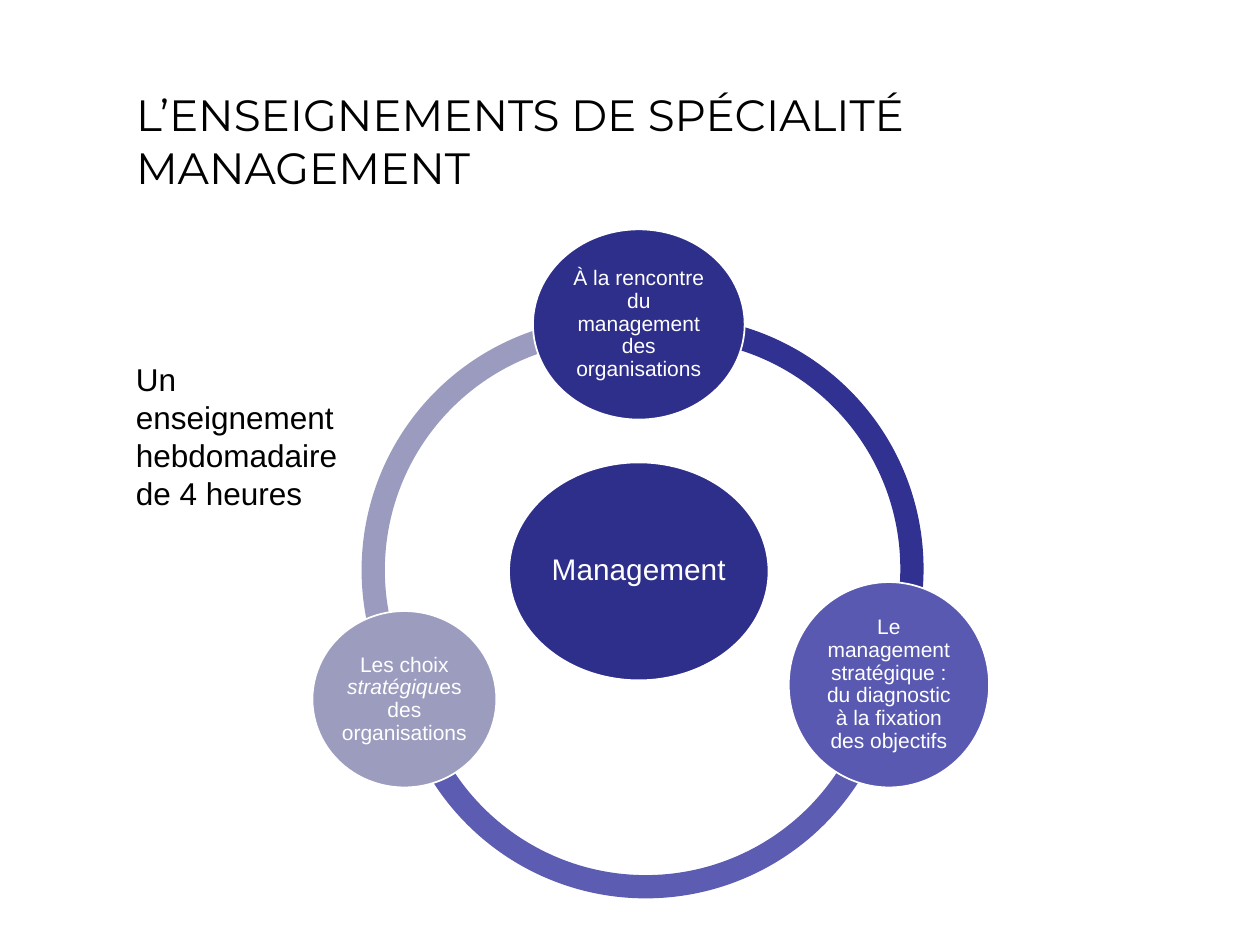
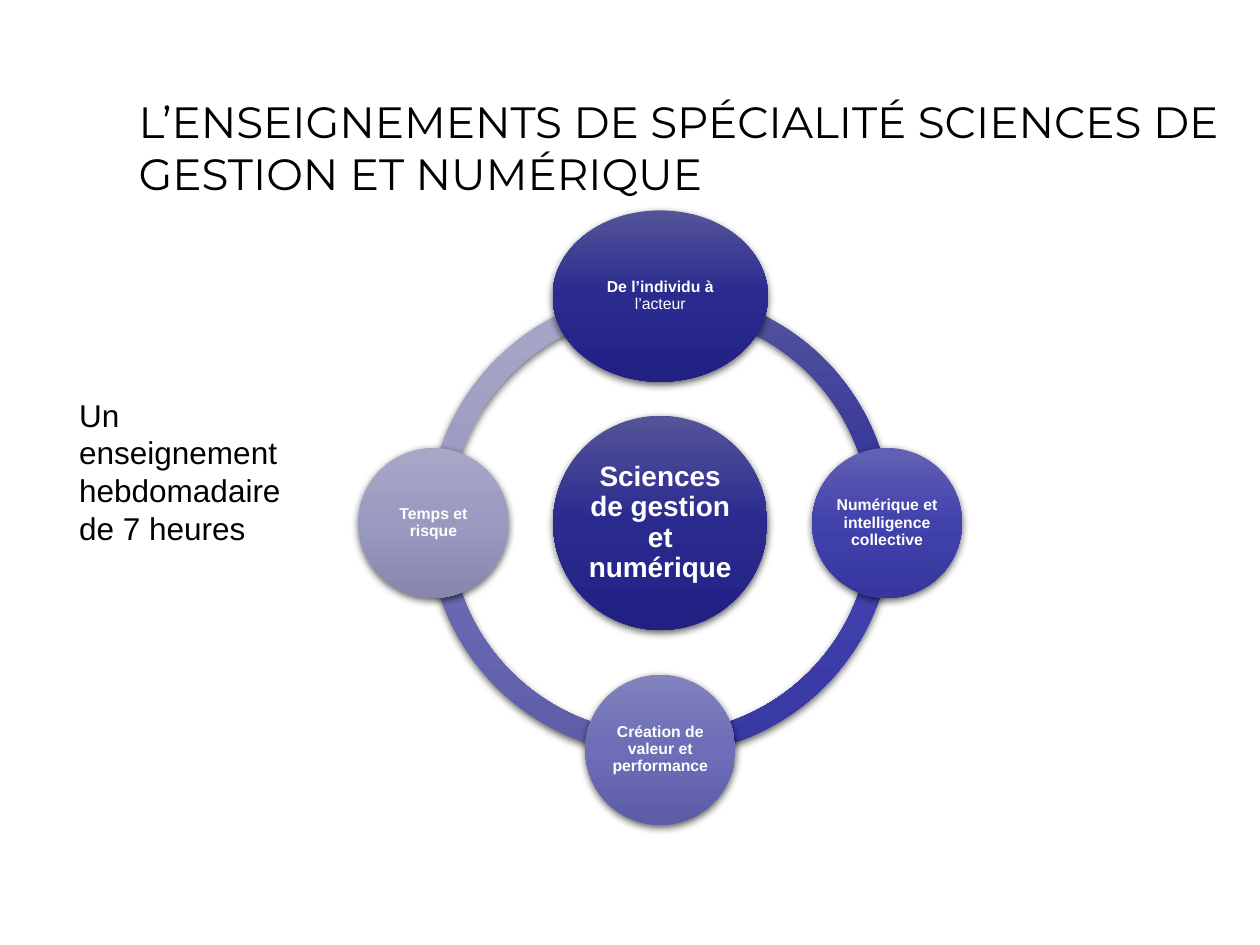
from math import cos, radians, sin

from lxml.etree import SubElement
from pptx import Presentation
from pptx.dml.color import RGBColor
from pptx.enum.shapes import MSO_SHAPE
from pptx.enum.text import MSO_ANCHOR, MSO_AUTO_SIZE, PP_ALIGN
from pptx.oxml.ns import qn
from pptx.util import Inches, Pt

BLACK, WHITE = "000000", "FFFFFF"
NAVY = ("545499", "2A2A8F", "212184")


def rgb(value):
    return RGBColor.from_string(value)


class Deck:
    title_font, body_font = "Montserrat", "Arial"

    def __init__(self):
        self.prs = Presentation()
        self.prs.slide_width, self.prs.slide_height = Inches(10), Inches(7.5)

    def add_slide(self, title, left, top):
        self.s = self.prs.slides.add_slide(self.prs.slide_layouts[5])
        sp = self.s.shapes.title
        sp.left, sp.top, sp.width, sp.height = map(Inches, (left, top, 9, 1.25))
        tf = sp.text_frame
        tf.auto_size = MSO_AUTO_SIZE.NONE
        tf.vertical_anchor = MSO_ANCHOR.MIDDLE
        p = tf.paragraphs[0]
        p.alignment = PP_ALIGN.LEFT
        self.run(p, title, 25, BLACK, self.title_font)

    def run(self, p, text, size, color, font=None, bold=False, italic=False):
        r = p.add_run()
        r.text = text
        r.font.name = font or self.body_font
        r.font.size = Pt(size)
        r.font.bold, r.font.italic = bold, italic
        r.font.color.rgb = rgb(color)

    def start_cycle(self):
        self.group = self.s.shapes.add_group_shape()

    def shape(self, kind, box, fill):
        sp = self.group.shapes.add_shape(kind, *map(Inches, box))
        sp.shadow.inherit = False
        sp.line.fill.background()
        if isinstance(fill, str):
            sp.fill.solid()
            sp.fill.fore_color.rgb = rgb(fill)
        else:
            self.gradient(sp, fill)
            self.drop_shadow(sp)
        return sp

    def gradient(self, sp, colors):
        sp.fill.gradient()
        sp.fill.gradient_angle = 270
        stops = sp._element.spPr.find(qn("a:gradFill")).find(qn("a:gsLst"))
        for stop in list(stops):
            stops.remove(stop)
        for i, color in enumerate(colors):
            stop = SubElement(stops, qn("a:gs"), pos=str(i * 50000))
            SubElement(stop, qn("a:srgbClr"), val=color)

    def drop_shadow(self, sp):
        effects = sp._element.spPr.find(qn("a:effectLst"))
        shadow = SubElement(effects, qn("a:outerShdw"), blurRad=str(Pt(4.5)),
                            dist=str(Pt(1.5)), dir="5400000", rotWithShape="0")
        color = SubElement(shadow, qn("a:srgbClr"), val=BLACK)
        SubElement(color, qn("a:alpha"), val="63000")

    def arc(self, left, top, size, start, end, fill):
        sp = self.shape(MSO_SHAPE.BLOCK_ARC, (left, top, size, size), fill)
        for i, value in enumerate((start * 0.6, end * 0.6, 0.046)):
            sp.adjustments[i] = value

    def bubble(self, box, fill, size, runs, outline=False, inset=0.02):
        sp = self.shape(MSO_SHAPE.OVAL, box, fill)
        if outline:
            sp.line.color.rgb = rgb(WHITE)
            sp.line.width = Pt(1)
        tf = sp.text_frame
        tf.word_wrap = True
        tf.vertical_anchor = MSO_ANCHOR.MIDDLE
        tf.margin_left = tf.margin_right = Inches(inset)
        tf.margin_top = tf.margin_bottom = Inches(inset)
        p = tf.paragraphs[0]
        p.alignment = PP_ALIGN.CENTER
        p.line_spacing = 0.9
        for text, style in runs:
            self.run(p, text, size, WHITE, **style)

    def note(self, text, left, top):
        sp = self.s.shapes.add_textbox(*map(Inches, (left, top, 1.98, 1.31)))
        tf = sp.text_frame
        tf.word_wrap = True
        tf.auto_size = MSO_AUTO_SIZE.SHAPE_TO_FIT_TEXT
        self.run(tf.paragraphs[0], text, 18, BLACK)


def management_slide(deck):
    deck.add_slide("L’ENSEIGNEMENTS DE SPÉCIALITÉ MANAGEMENT", 0.98, 0.49)
    deck.start_cycle()
    arcs = [
        (2.87, 2.52, 148.36, 275.76, "9B9BBF"),
        (3.12, 3.12, 9.09, 167.43, "5C5CB3"),
        (3.32, 2.51, 262.65, 27.9, "313192"),
    ]
    for left, top, start, end, color in arcs:
        deck.arc(left, top, 4.01, start, end, color)
    plain, italic = {}, {"italic": True}
    bubbles = [
        ((4.04, 3.67, 2.06, 1.73), "2E2E8B", 17, [("Management", plain)]),
        ((4.23, 1.82, 1.68, 1.51), "2E2E8B", 12,
         [("À la rencontre du management des organisations", plain)]),
        ((6.26, 4.62, 1.59, 1.63), "5959B1", 12,
         [("Le management stratégique : du diagnostic à la fixation des objectifs", plain)]),
        ((2.48, 4.85, 1.46, 1.4), "9C9CBF", 12,
         [("Les choix ", plain), ("stratégiqu", italic), ("es des organisations", plain)]),
    ]
    for box, color, size, runs in bubbles:
        deck.bubble(box, color, size, runs, outline=True)
    deck.note("Un enseignement hebdomadaire de 4 heures", 0.98, 2.81)


def sciences_slide(deck):
    deck.add_slide("L’ENSEIGNEMENTS DE SPÉCIALITÉ SCIENCES DE GESTION ET NUMÉRIQUE", 1, 0.54)
    deck.start_cycle()
    cx, cy, ring, radius = 5.24, 4.15, 3.68, 1.8

    def centred(x, y, width, height):
        return x - width / 2, y - height / 2, width, height

    arc_fills = [
        (180, ("A6A6C7", "9999C1", "8686AE")),
        (90, ("8383BE", "6F6FB9", "5E5EA8")),
        (0, ("6363B8", "4444B2", "3838A2")),
        (270, ("55559F", "2C2C97", "23238B")),
    ]
    for start, fill in arc_fills:
        deck.arc(cx - ring / 2, cy - ring / 2, ring, start, (start + 90) % 360, fill)
    bold, plain = {"bold": True}, {}
    deck.bubble(centred(cx, cy, 1.7, 1.7), NAVY, 16,
                [("Sciences de gestion et numérique", bold)])
    themes = [
        (1.71, 1.36, NAVY, [("De l’individu à ", bold), ("l’acteur", plain)]),
        (1.19, 1.19, ("6161B3", "4242AD", "36369E"),
         [("Numérique et intelligence collective", bold)]),
        (1.19, 1.19, ("8282BD", "6D6DB8", "5D5DA7"),
         [("Création de valeur et performance", bold)]),
        (1.19, 1.19, ("A7A7C7", "9A9AC1", "8787AE"), [("Temps et risque", bold)]),
    ]
    for i, (width, height, fill, runs) in enumerate(themes):
        angle = radians(90 * i - 90)
        x, y = cx + radius * cos(angle), cy + radius * sin(angle)
        deck.bubble(centred(x, y, width, height), fill, 9, runs, inset=0.01)
    deck.note("Un enseignement hebdomadaire de 7 heures", 0.53, 3.09)


def main():
    deck = Deck()
    management_slide(deck)
    sciences_slide(deck)
    deck.prs.save("out.pptx")


if __name__ == "__main__":
    main()
